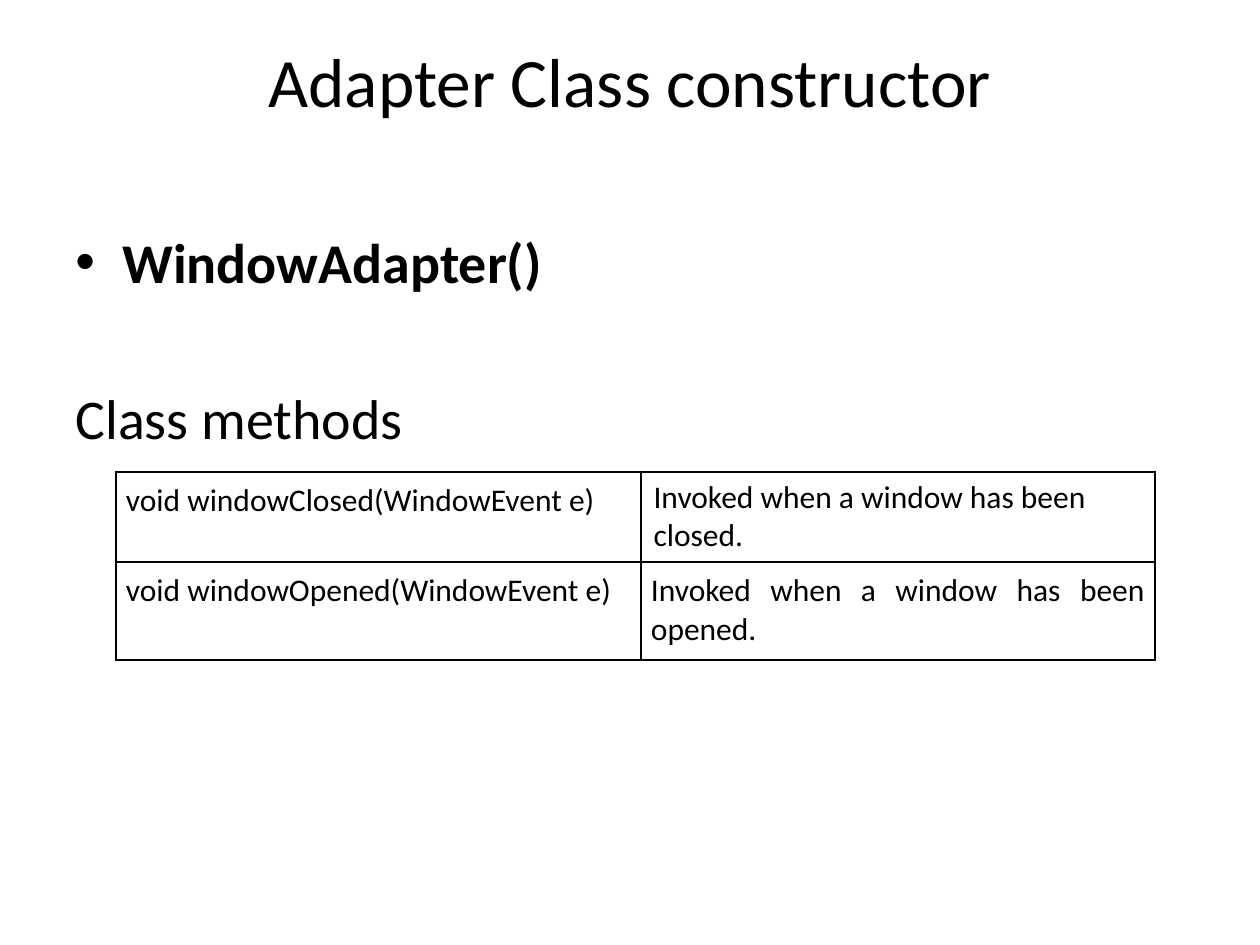
from lxml import etree
from pptx import Presentation, util as u
from pptx.dml.color import RGBColor
from pptx.enum import text
from pptx.oxml import ns

PX = 914400 // 126
FONT = "Calibri"
BLACK = "000000"
WHITE = "FFFFFF"
LEFT, JUSTIFY, CENTER = text.PP_ALIGN.LEFT, text.PP_ALIGN.JUSTIFY, text.PP_ALIGN.CENTER


def px(value):
    return u.Emu(value * PX)


def color(value):
    return RGBColor.from_string(value)


def add_run(paragraph, words, size, bold=False):
    run = paragraph.add_run()
    run.text = words
    run.font.name = FONT
    run.font.size = u.Pt(size)
    run.font.bold = bold
    run.font.color.rgb = color(BLACK)


def add_text_frame(slide, left, top, width, height):
    box = slide.shapes.add_textbox(px(left), px(top), px(width), px(height))
    box.text_frame.word_wrap = True
    return box.text_frame


def add_bullet(paragraph, indent):
    properties = paragraph._p.get_or_add_pPr()
    properties.set("marL", str(px(indent)))
    properties.set("indent", str(-px(indent)))
    font = etree.SubElement(properties, ns.qn("a:buFont"))
    font.set("typeface", "Arial")
    bullet = etree.SubElement(properties, ns.qn("a:buChar"))
    bullet.set("char", "•")


def add_borders(cell):
    properties = cell._tc.get_or_add_tcPr()
    for position, side in enumerate(("a:lnL", "a:lnR", "a:lnT", "a:lnB")):
        line = etree.Element(ns.qn(side), w=str(u.Pt(1)))
        fill = etree.SubElement(line, ns.qn("a:solidFill"))
        etree.SubElement(fill, ns.qn("a:srgbClr"), val=BLACK)
        properties.insert(position, line)


def fill_cell(cell, words, alignment, inset):
    cell.fill.background()
    add_borders(cell)
    if inset:
        cell.margin_left = cell.margin_right = px(inset)
        cell.margin_top = cell.margin_bottom = px(inset)
    paragraph = cell.text_frame.paragraphs[0]
    paragraph.alignment = alignment
    add_run(paragraph, words, 18)


def add_method_table(slide, rows, left, top, widths, heights):
    frame = slide.shapes.add_table(len(rows), len(widths), px(left), px(top),
                                   px(sum(widths)), px(sum(heights)))
    table = frame.table
    table.first_row = table.horz_banding = False
    for column, width in zip(table.columns, widths):
        column.width = px(width)
    for row, height, contents in zip(table.rows, heights, rows):
        row.height = px(height)
        for cell, content in zip(row.cells, contents):
            fill_cell(cell, *content)


def main():
    presentation = Presentation()
    presentation.slide_width, presentation.slide_height = px(1260), px(945)
    slide = presentation.slides.add_slide(presentation.slide_layouts[6])
    slide.background.fill.solid()
    slide.background.fill.fore_color.rgb = color(WHITE)

    # Title
    title = add_text_frame(slide, 63, 38, 1134, 158)
    title.margin_top = 0
    title.paragraphs[0].alignment = CENTER
    add_run(title.paragraphs[0], "Adapter Class constructor", 39.6)

    # Constructor and heading of the methods
    body = add_text_frame(slide, 63, 221, 1134, 624)
    constructor = body.paragraphs[0]
    add_bullet(constructor, 47)
    add_run(constructor, "WindowAdapter()", 32, bold=True)
    heading = body.add_paragraph()
    heading.space_before = u.Pt(51)
    add_run(heading, "Class methods", 32)

    # Methods: words, alignment and inset (0 keeps the default) of each cell
    methods = [
        [("void windowClosed(WindowEvent e)", JUSTIFY, 10),
         ("Invoked when a window has been closed.", LEFT, 0)],
        [("void windowOpened(WindowEvent e)", JUSTIFY, 10),
         ("Invoked when a window has been opened.", JUSTIFY, 10)],
    ]
    add_method_table(slide, methods, 116, 472, (525, 514), (90, 98))

    presentation.save("out.pptx")


if __name__ == "__main__":
    main()
